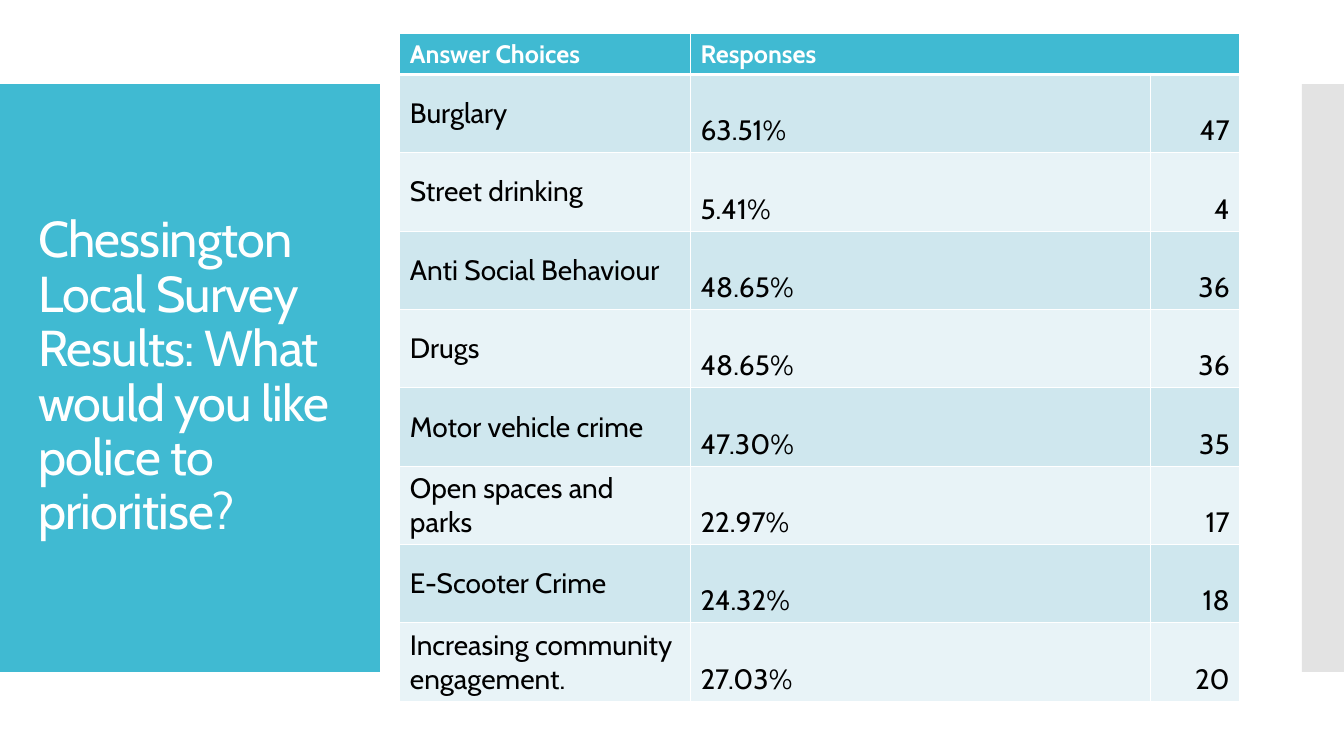
from typing import NamedTuple

from lxml import etree
from pptx import Presentation
from pptx.dml.color import RGBColor
from pptx.enum.shapes import MSO_SHAPE
from pptx.enum.text import MSO_ANCHOR, MSO_AUTO_SIZE, PP_ALIGN
from pptx.oxml.ns import qn
from pptx.util import Emu, Inches, Pt

RECTANGLE = MSO_SHAPE.RECTANGLE
MIDDLE, BOTTOM = MSO_ANCHOR.MIDDLE, MSO_ANCHOR.BOTTOM
LEFT, RIGHT = PP_ALIGN.LEFT, PP_ALIGN.RIGHT
NO_AUTOFIT = MSO_AUTO_SIZE.NONE

TEAL = RGBColor(0x40, 0xBA, 0xD2)
GREY = RGBColor(0xC8, 0xC8, 0xC8)
BAND_DARK = RGBColor(0xCF, 0xE7, 0xEE)
BAND_LIGHT = RGBColor(0xE8, 0xF3, 0xF7)
WHITE = RGBColor(0xFF, 0xFF, 0xFF)
BLACK = RGBColor(0, 0, 0)
FONT = "Cabin"

# The slide is a grid of 160 columns by 90 rows
SLIDE_WIDTH, SLIDE_HEIGHT = Inches(13.33), Inches(7.5)
GRID_COLUMNS, GRID_ROWS = 160, 90


class Area(NamedTuple):
    left: float
    top: float
    width: float
    height: float


class Panel(NamedTuple):
    area: Area
    color: RGBColor
    opacity: int


class Answer(NamedTuple):
    choice: str
    percent: str
    count: str


TITLE = "Chessington Local Survey Results: What would you like police to prioritise?"
TITLE_AREA = Area(3.36, 14.76, 38.64, 60.36)
PANELS = [
    Panel(Area(0, 10, 45.24, 70), TEAL, 100),
    Panel(Area(155, 10, 5, 70), GREY, 50),
]
ANSWERS = [
    Answer("Burglary", "63.51%", "47"),
    Answer("Street drinking", "5.41%", "4"),
    Answer("Anti Social Behaviour", "48.65%", "36"),
    Answer("Drugs", "48.65%", "36"),
    Answer("Motor vehicle crime", "47.30%", "35"),
    Answer("Open spaces and parks", "22.97%", "17"),
    Answer("E-Scooter Crime", "24.32%", "18"),
    Answer("Increasing community engagement.", "27.03%", "20"),
]
COLUMN_WIDTHS = [34.6, 54.8, 10.6]
HEADER_HEIGHT, ANSWER_HEIGHT = 4.7, 9.33
TABLE_AREA = Area(47.6, 4, sum(COLUMN_WIDTHS), HEADER_HEIGHT + len(ANSWERS) * ANSWER_HEIGHT)


def across(columns: float) -> Emu:
    return Emu(round(SLIDE_WIDTH * columns / GRID_COLUMNS))


def down(rows: float) -> Emu:
    return Emu(round(SLIDE_HEIGHT * rows / GRID_ROWS))


def place(area: Area) -> tuple[Emu, Emu, Emu, Emu]:
    return across(area.left), down(area.top), across(area.width), down(area.height)


def write(frame, text: str, *, size: float, color: RGBColor, bold: bool = False,
          align=LEFT, line_spacing: float = 1.0, tracking: int = 0) -> None:
    para = frame.paragraphs[0]
    para.alignment = align
    para.line_spacing = line_spacing
    span = para.add_run()
    span.text = text
    span.font.name = FONT
    span.font.size = Pt(size)
    span.font.bold = bold
    span.font.color.rgb = color
    if tracking:
        span.font._element.set("spc", str(tracking))


def add_panel(page, panel: Panel) -> None:
    box = page.shapes.add_shape(RECTANGLE, *place(panel.area))
    box.shadow.inherit = False
    box.line.fill.background()
    box.fill.solid()
    box.fill.fore_color.rgb = panel.color
    if panel.opacity < 100:
        color = box._element.spPr.find(".//" + qn("a:srgbClr"))
        etree.SubElement(color, qn("a:alpha")).set("val", str(panel.opacity * 1000))


def add_title(page) -> None:
    title = page.shapes.title
    title.left, title.top, title.width, title.height = place(TITLE_AREA)
    frame = title.text_frame
    frame.word_wrap = True
    frame.auto_size = NO_AUTOFIT
    frame.vertical_anchor = MIDDLE
    write(frame, TITLE, size=36, color=WHITE, line_spacing=0.9, tracking=-60)
    # Bring the title in front of the panels
    page.shapes._spTree.append(title._element)


def style_cell(cell, fill: RGBColor, anchor, top: float = 1, bottom: float = 1) -> None:
    cell.fill.solid()
    cell.fill.fore_color.rgb = fill
    cell.vertical_anchor = anchor
    properties = cell._tc.get_or_add_tcPr()
    sides = {"a:lnL": 1, "a:lnR": 1, "a:lnT": top, "a:lnB": bottom}
    for index, (side, points) in enumerate(sides.items()):
        line = etree.Element(qn(side), w=str(Pt(points)))
        solid = etree.SubElement(line, qn("a:solidFill"))
        etree.SubElement(solid, qn("a:srgbClr")).set("val", str(WHITE))
        properties.insert(index, line)


def add_answer_table(page) -> None:
    frame = page.shapes.add_table(len(ANSWERS) + 1, len(COLUMN_WIDTHS), *place(TABLE_AREA))
    table = frame.table
    table.horz_banding = False
    for column, width in zip(table.columns, COLUMN_WIDTHS):
        column.width = across(width)
    for index, row in enumerate(table.rows):
        row.height = down(ANSWER_HEIGHT if index else HEADER_HEIGHT)

    # Header row, its second cell spanning both value columns
    for cell in table.rows[0].cells:
        style_cell(cell, TEAL, MIDDLE, bottom=3)
    table.cell(0, 1).merge(table.cell(0, 2))
    for index, heading in enumerate(["Answer Choices", "Responses"]):
        write(table.cell(0, index).text_frame, heading, size=18, color=WHITE, bold=True)

    # Answer rows, values sitting at the foot of their cells
    formats = [(MIDDLE, LEFT), (BOTTOM, LEFT), (BOTTOM, RIGHT)]
    for row, answer in enumerate(ANSWERS, start=1):
        band = BAND_DARK if row % 2 else BAND_LIGHT
        for column, (text, (anchor, align)) in enumerate(zip(answer, formats)):
            cell = table.cell(row, column)
            style_cell(cell, band, anchor, top=3 if row == 1 else 1)
            write(cell.text_frame, text, size=20, color=BLACK, align=align)


def main() -> None:
    deck = Presentation()
    deck.slide_width, deck.slide_height = SLIDE_WIDTH, SLIDE_HEIGHT
    title_only = deck.slide_layouts[5]
    page = deck.slides.add_slide(title_only)
    for panel in PANELS:
        add_panel(page, panel)
    add_title(page)
    add_answer_table(page)
    deck.save("out.pptx")


if __name__ == "__main__":
    main()
